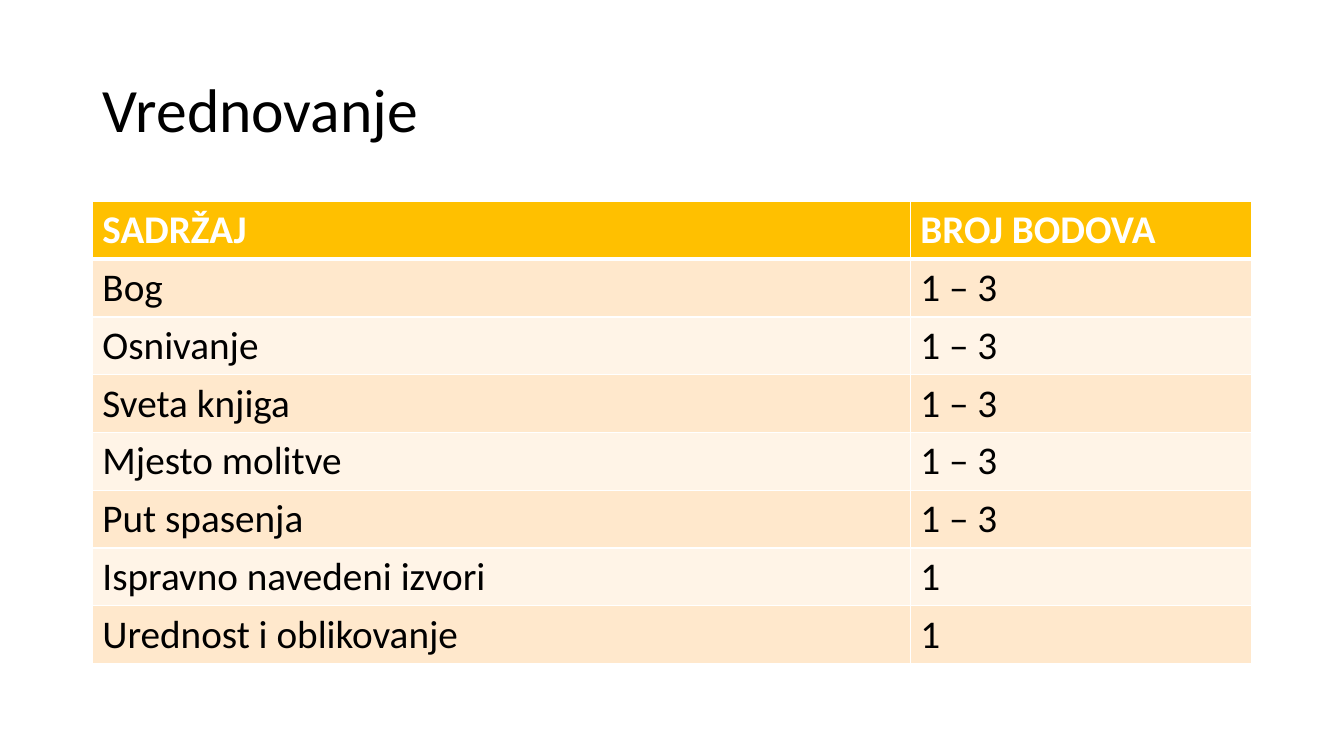
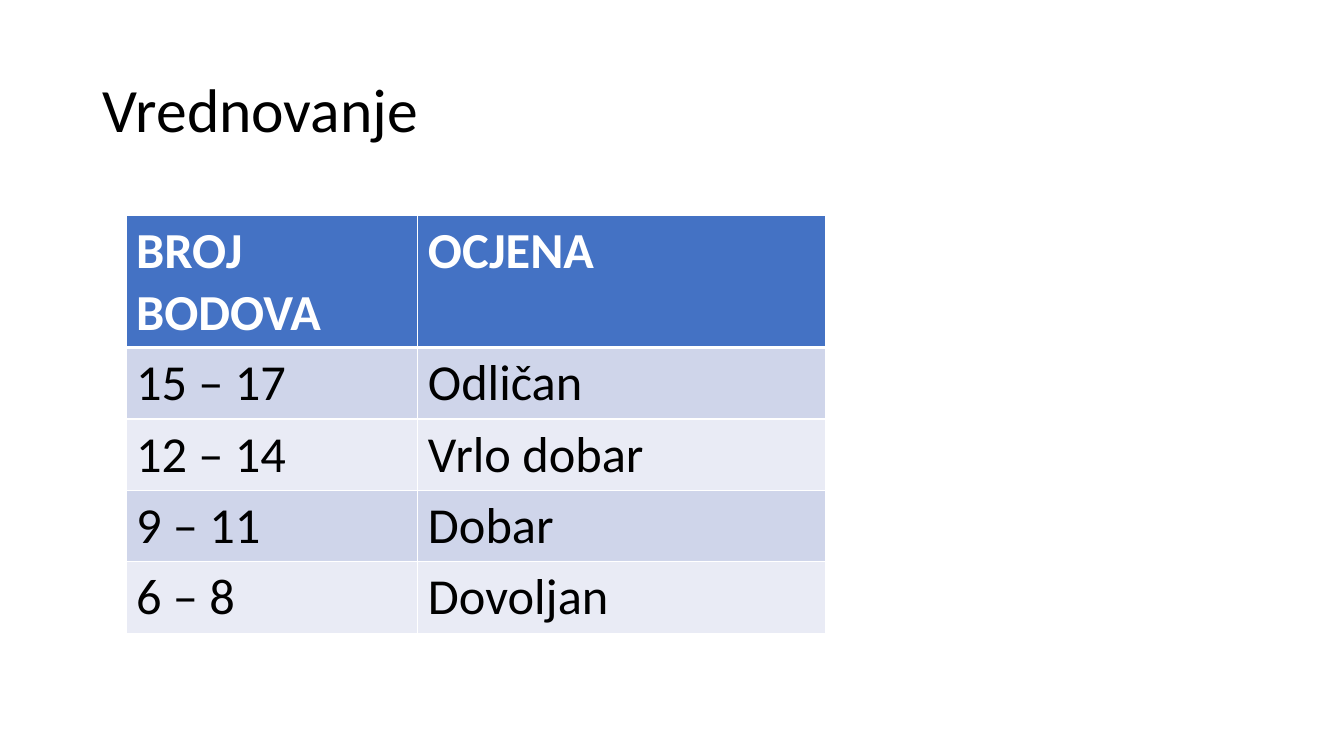
from lxml import etree
from pptx import Presentation
from pptx.dml.color import RGBColor
from pptx.enum.text import MSO_ANCHOR
from pptx.oxml.ns import qn
from pptx.util import Emu, Pt

MIDDLE = MSO_ANCHOR.MIDDLE
FONT = "Calibri"
WHITE, BLACK = "FFFFFF", "000000"
SLIDE_SIZE = (1280, 720)
TITLE_BOX = (88, 38, 1104, 139)
TITLE_SIZE = 44
THIN, THICK = 1, 3

SLIDES = [
    {
        "title": "Vrednovanje",
        "origin": (88, 192),
        "columns": (779, 325),
        "header_height": 55,
        "row_height": 55,
        "size": 28,
        "header_fill": "FFC000",
        "bands": ("FFE8CC", "FFF4E7"),
        "rows": [
            ("SADRŽAJ", "BROJ BODOVA"),
            ("Bog", "1 – 3"),
            ("Osnivanje", "1 – 3"),
            ("Sveta knjiga", "1 – 3"),
            ("Mjesto molitve", "1 – 3"),
            ("Put spasenja", "1 – 3"),
            ("Ispravno navedeni izvori", "1"),
            ("Urednost i oblikovanje", "1"),
        ],
    },
    {
        "title": "Vrednovanje",
        "origin": (120, 205),
        "columns": (278, 388),
        "header_height": 126,
        "row_height": 68,
        "size": 36,
        "header_fill": "4472C4",
        "bands": ("CFD5EA", "E9EBF5"),
        "rows": [
            ("BROJ BODOVA", "OCJENA"),
            ("15 – 17", "Odličan"),
            ("12 – 14", "Vrlo dobar"),
            ("9 – 11", "Dobar"),
            ("6 – 8", "Dovoljan"),
        ],
    },
]


def px(length):
    return Emu(length * 9525)


def color(hex_code):
    return RGBColor.from_string(hex_code)


def write(frame, text, size, hex_code, bold=False):
    paragraph = frame.paragraphs[0]
    run = paragraph.add_run()
    run.text = text
    style = {"name": FONT, "size": Pt(size), "bold": bold}
    for attribute, value in style.items():
        setattr(run.font, attribute, value)
    run.font.color.rgb = color(hex_code)
    return paragraph


def add_title(slide, text):
    frame = slide.shapes.add_textbox(*map(px, TITLE_BOX)).text_frame
    frame.word_wrap = True
    frame.vertical_anchor = MIDDLE
    write(frame, text, TITLE_SIZE, BLACK).line_spacing = 0.9


def set_borders(cell, top, bottom):
    """Draw white cell edges; widths are in points."""
    properties = cell._tc.get_or_add_tcPr()
    widths = {"a:lnL": THIN, "a:lnR": THIN, "a:lnT": top, "a:lnB": bottom}
    for tag, width in widths.items():
        edge = etree.SubElement(properties, qn(tag), w=str(Pt(width)))
        fill = etree.SubElement(edge, qn("a:solidFill"))
        etree.SubElement(fill, qn("a:srgbClr"), val=WHITE)


def add_score_table(slide, content):
    rows, columns = content["rows"], content["columns"]
    heights = [content["header_height"]]
    heights += [content["row_height"]] * (len(rows) - 1)
    box = (*content["origin"], sum(columns), sum(heights))
    table = slide.shapes.add_table(len(rows), len(columns), *map(px, box)).table
    for column, width in zip(table.columns, columns):
        column.width = px(width)
    for r, (texts, height) in enumerate(zip(rows, heights)):
        table.rows[r].height = px(height)
        header = r == 0
        fill = content["header_fill"] if header else content["bands"][(r - 1) % 2]
        for c, text in enumerate(texts):
            cell = table.cell(r, c)
            set_borders(cell, THICK if r == 1 else THIN, THICK if header else THIN)
            cell.fill.solid()
            cell.fill.fore_color.rgb = color(fill)
            write(cell.text_frame, text, content["size"],
                  WHITE if header else BLACK, header)


def main():
    deck = Presentation()
    deck.slide_width, deck.slide_height = map(px, SLIDE_SIZE)
    blank = deck.slide_layouts[6]
    for content in SLIDES:
        slide = deck.slides.add_slide(blank)
        add_title(slide, content["title"])
        add_score_table(slide, content)
    deck.save("out.pptx")


if __name__ == "__main__":
    main()
